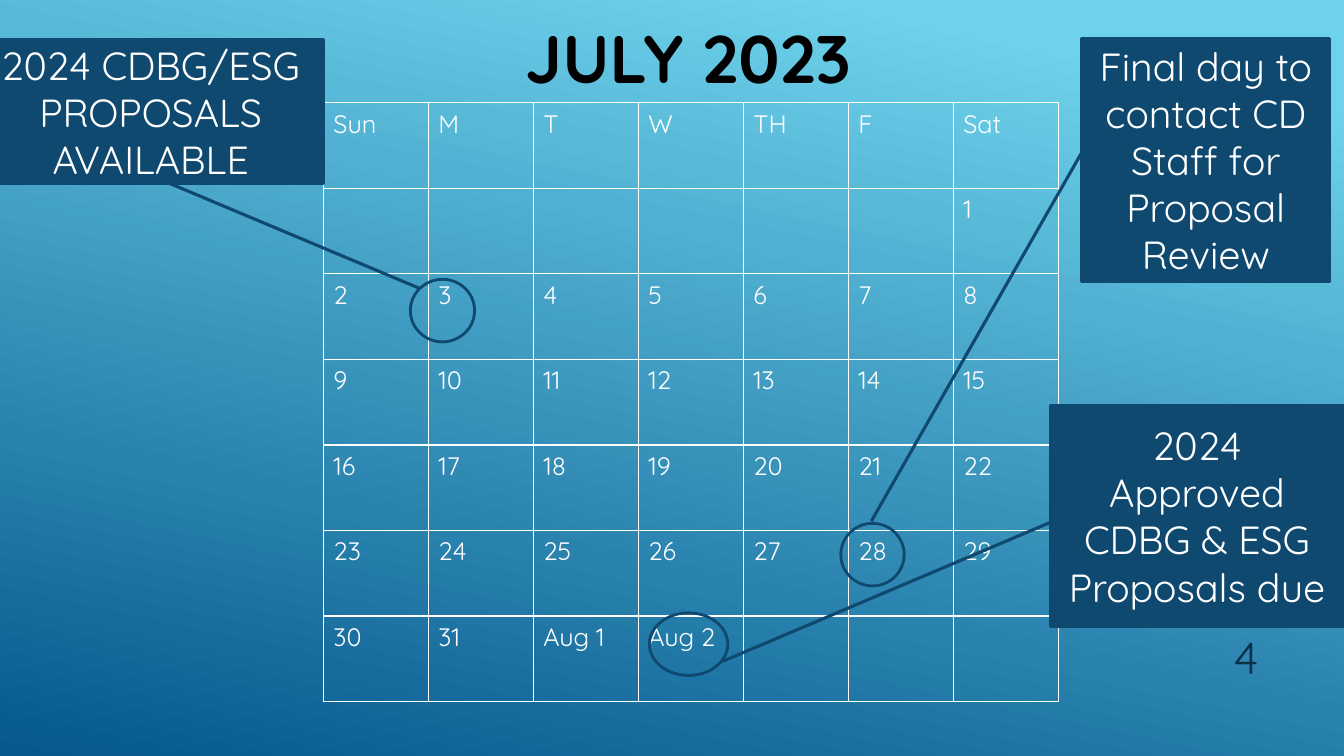
from dataclasses import dataclass

from lxml import etree
from pptx import Presentation
from pptx.dml.color import RGBColor
from pptx.enum.shapes import MSO_SHAPE
from pptx.enum.text import MSO_ANCHOR, PP_ALIGN
from pptx.oxml.ns import qn
from pptx.util import Emu, Inches, Pt

CENTER, LEFT, RIGHT = PP_ALIGN.CENTER, PP_ALIGN.LEFT, PP_ALIGN.RIGHT
TOP, MIDDLE, BOTTOM = MSO_ANCHOR.TOP, MSO_ANCHOR.MIDDLE, MSO_ANCHOR.BOTTOM
CALLOUT, RING = MSO_SHAPE.LINE_CALLOUT_1, MSO_SHAPE.FLOWCHART_CONNECTOR
TITLE_ONLY = 5
SLIDE_W, SLIDE_H = Inches(13.333), Inches(7.5)
GRID_COLS, GRID_ROWS = 160, 90


@dataclass(frozen=True)
class Theme:
    font: str = "Quicksand"
    sky: str = "6ED2EB"
    deep: str = "06588E"
    navy: str = "0F496F"
    ink: str = "0A304A"
    black: str = "000000"
    white: str = "FFFFFF"
    title: int = 48
    number: int = 32
    note: int = 28
    day: int = 18
    rule: float = 1
    ring: float = 2
    edge: float = 2.25


@dataclass(frozen=True)
class Frame:
    """A box in columns and rows of the 160 by 90 slide grid."""
    col: float
    row: float
    cols: float
    rows: float

    def emu(self) -> tuple[Emu, Emu, Emu, Emu]:
        x, y = SLIDE_W / GRID_COLS, SLIDE_H / GRID_ROWS
        return (Emu(round(self.col * x)), Emu(round(self.row * y)),
                Emu(round(self.cols * x)), Emu(round(self.rows * y)))


@dataclass(frozen=True)
class Note:
    """A callout; leader holds y, x of its start, then y, x of its end."""
    text: str
    frame: Frame
    leader: tuple[float, float, float, float]


THEME = Theme()
TITLE = Frame(44, 1.3, 75.8, 10.9)
CALENDAR = Frame(38.5, 12.24, 87.5, 71.3)
NUMBER = Frame(136, 73.2, 15, 8.75)
RINGS = [
    Frame(100.1, 62.3, 7.55, 7.45),
    Frame(77.3, 72.96, 9.35, 7.45),
    Frame(48.85, 33.25, 7.65, 7.45),
]
NOTES = [
    Note("Final day to contact CD Staff for Proposal Review",
         Frame(128.8, 4.55, 29.5, 28.9), (0.47, 0, 1.99, -0.85)),
    Note("2024 Approved CDBG & ESG Proposals due",
         Frame(125.05, 48.25, 34.9, 26.3), (0.53, 0, 1.16, -1.12)),
    Note("2024 CDBG/ESG PROPOSALS AVAILABLE",
         Frame(-2.64, 4.7, 41.15, 17.15), (0.44, 0, 1.73, 1.28)),
]
WEEKDAYS = ["Sun", "M", "T", "W", "TH", "F", "Sat"]
FIRST_COLUMN, LAST_DAY = 6, 31
DAYS = ([""] * FIRST_COLUMN + [str(d) for d in range(1, LAST_DAY + 1)]
        + ["Aug 1", "Aug 2"])


def write(tf, text: str, size: float, color: str, align=LEFT,
          anchor=TOP, bold: bool = False) -> None:
    tf.word_wrap = True
    tf.vertical_anchor = anchor
    p = tf.paragraphs[0]
    p.alignment = align
    r = p.add_run()
    r.text = text
    style = {"name": THEME.font, "size": Pt(size), "bold": bold}
    for key, value in style.items():
        setattr(r.font, key, value)
    r.font.color.rgb = RGBColor.from_string(color)


def paint_background(slide) -> None:
    fill = slide.background.fill
    fill.gradient()
    fill.gradient_angle = 258
    stops = zip(fill.gradient_stops, (0.1, 1), (THEME.sky, THEME.deep))
    for stop, position, color in stops:
        stop.position = position
        stop.color.rgb = RGBColor.from_string(color)


def add_title(slide, text: str) -> None:
    sp = slide.shapes.title
    sp.left, sp.top, sp.width, sp.height = TITLE.emu()
    write(sp.text_frame, text, THEME.title, THEME.black, CENTER, MIDDLE, True)


def set_borders(cell) -> None:
    tcPr = cell._tc.get_or_add_tcPr()
    for i, side in enumerate(("lnL", "lnR", "lnT", "lnB")):
        ln = etree.Element(qn(f"a:{side}"), w=str(Pt(THEME.rule)))
        fill = etree.SubElement(ln, qn("a:solidFill"))
        etree.SubElement(fill, qn("a:srgbClr"), val=THEME.white)
        tcPr.insert(i, ln)


def add_calendar(slide) -> None:
    n = len(WEEKDAYS)
    weeks = -(-len(DAYS) // n)
    labels = WEEKDAYS + DAYS + [""] * (weeks * n - len(DAYS))
    table = slide.shapes.add_table(weeks + 1, n, *CALENDAR.emu()).table
    table.first_row = table.horz_banding = False
    for cell, label in zip(table.iter_cells(), labels):
        cell.fill.background()
        set_borders(cell)
        if label:
            write(cell.text_frame, label, THEME.day, THEME.white)


def add_outlined(slide, kind, frame: Frame, width: float):
    sp = slide.shapes.add_shape(kind, *frame.emu())
    sp.shadow.inherit = False
    sp.fill.background()
    sp.line.color.rgb = RGBColor.from_string(THEME.navy)
    sp.line.width = Pt(width)
    return sp


def add_note(slide, note: Note) -> None:
    sp = add_outlined(slide, CALLOUT, note.frame, THEME.edge)
    for i, share in enumerate(note.leader):
        sp.adjustments[i] = share
    sp.fill.solid()
    sp.fill.fore_color.rgb = RGBColor.from_string(THEME.navy)
    write(sp.text_frame, note.text, THEME.note, THEME.white, CENTER, MIDDLE)


def main() -> None:
    prs = Presentation()
    prs.slide_width, prs.slide_height = SLIDE_W, SLIDE_H
    slide = prs.slides.add_slide(prs.slide_layouts[TITLE_ONLY])
    paint_background(slide)
    add_title(slide, "JULY 2023")
    add_calendar(slide)
    for ring in RINGS:
        add_outlined(slide, RING, ring, THEME.ring)
    for note in NOTES:
        add_note(slide, note)
    number = slide.shapes.add_textbox(*NUMBER.emu())
    write(number.text_frame, "4", THEME.number, THEME.ink, RIGHT, BOTTOM)
    prs.save("out.pptx")


if __name__ == "__main__":
    main()
